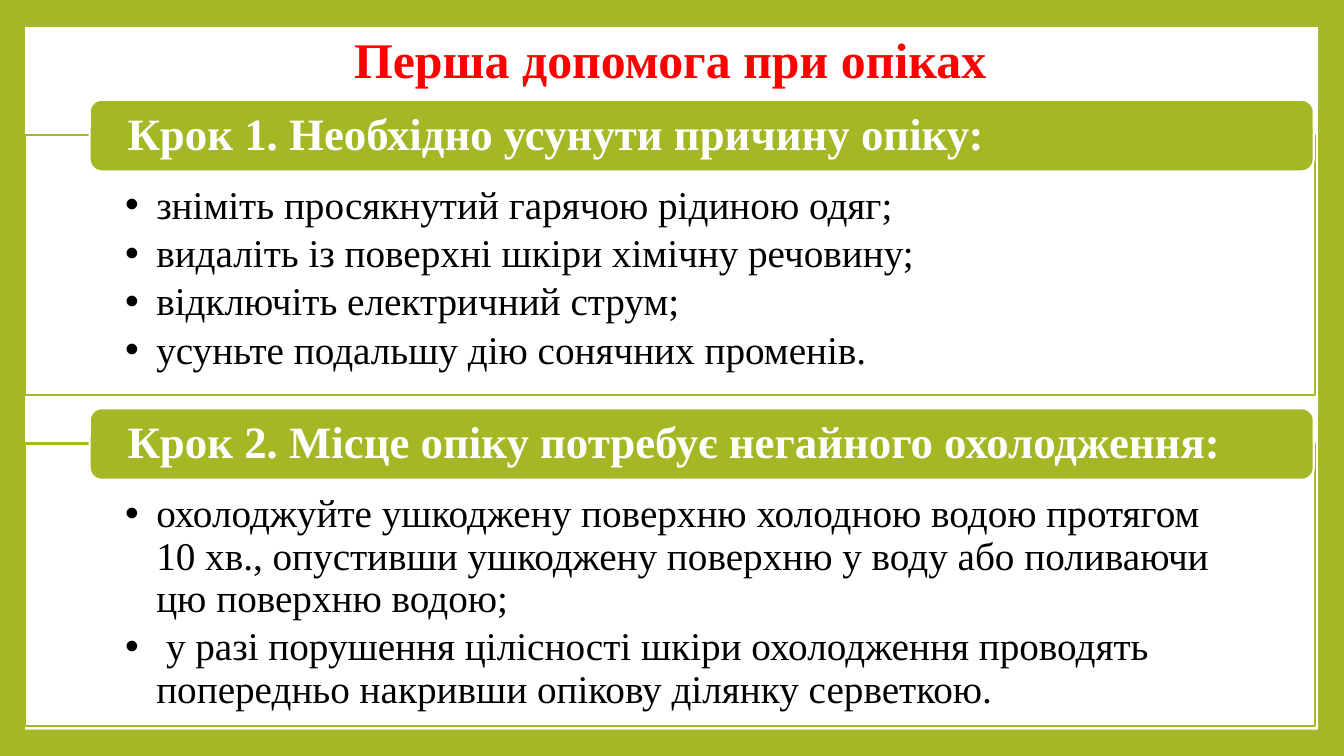
from pptx import Presentation
from pptx.dml.color import RGBColor
from pptx.enum.shapes import MSO_SHAPE as Shape
from pptx.enum.text import MSO_ANCHOR as Anchor, MSO_AUTO_SIZE as Auto, PP_ALIGN as Align
from pptx.util import Inches, Pt

FONT = "Times New Roman"
GREEN, WHITE, BLACK, RED = "A4B724", "FFFFFF", "000000", "FF0000"
BACK = "A6B727"
TITLE = "Перша допомога при опіках"
# heading, top of the heading bar, height of the list box, list items
STEPS = [
    ("Крок 1. Необхідно усунути причину опіку:", 0.99, 2.58, [
        "зніміть просякнутий гарячою рідиною одяг;",
        "видаліть із поверхні шкіри хімічну речовину;",
        "відключіть електричний струм;",
        "усуньте подальшу дію сонячних променів.",
    ]),
    ("Крок 2. Місце опіку потребує негайного охолодження:", 4.05, 2.8, [
        "охолоджуйте ушкоджену поверхню холодною водою протягом 10 хв., "
        "опустивши ушкоджену поверхню у воду або поливаючи цю поверхню водою;",
        " у разі порушення цілісності шкіри охолодження проводять "
        "попередньо накривши опікову ділянку серветкою.",
    ]),
]
LEFT, WIDE = 0.25, 12.79
BAR_LEFT, BAR_WIDE, BAR_HIGH = 0.89, 12.14, 0.71
DROP = 0.35  # from the top of a bar to the top of its list box


def color(code):
    return RGBColor.from_string(code)


def place(shape, *box):
    shape.left, shape.top, shape.width, shape.height = map(Inches, box)


def paint(shape, fill, line=None):
    shape.fill.solid()
    shape.fill.fore_color.rgb = color(fill)
    if line:
        shape.line.color.rgb = color(line)
        shape.line.width = Pt(1.5)
    else:
        shape.line.fill.background()


def write(shape, lines, size, tint, bold=False, align=Align.LEFT,
          anchor=Anchor.MIDDLE, inset=(0.1, 0.05, 0.1, 0.05), hang=0):
    """Fill a shape with one paragraph a line; hang is the bullet indent."""
    frame = shape.text_frame
    frame.word_wrap, frame.auto_size = True, Auto.NONE
    frame.vertical_anchor = anchor
    (frame.margin_left, frame.margin_top,
     frame.margin_right, frame.margin_bottom) = map(Inches, inset)
    for i, line in enumerate(lines):
        para = frame.add_paragraph() if i else frame.paragraphs[0]
        para.alignment, para.line_spacing = align, 0.9
        para.space_before = Pt(4.2 if i else 0)
        if hang:
            props = para._p.get_or_add_pPr()
            props.set("marL", str(Inches(hang)))
            props.set("indent", str(-Inches(hang)))
        run = para.add_run()
        run.text = line
        font = run.font
        font.name, font.size, font.bold = FONT, Pt(size), bold
        font.color.rgb = color(tint)


def add(slide, kind, box, fill, line=None):
    shape = slide.shapes.add_shape(kind, *map(Inches, box))
    shape.shadow.inherit = False
    paint(shape, fill, line)
    return shape


def main():
    deck = Presentation()
    deck.slide_width, deck.slide_height = Inches(13.33), Inches(7.5)
    slide = deck.slides.add_slide(deck.slide_layouts[3])
    slide.background.fill.solid()
    slide.background.fill.fore_color.rgb = color(BACK)

    panel = add(slide, Shape.RECTANGLE, (0.25, 0.27, 12.82, 6.97), WHITE)
    slide.shapes._spTree.insert(2, panel._element)  # behind the placeholders

    title = slide.shapes.title
    place(title, 1.25, 0.29, 10.8, 0.66)
    write(title, [TITLE], 35.6, RED, bold=True, align=Align.CENTER)

    for i, (head, top, high, items) in enumerate(STEPS, 1):
        body = slide.placeholders[i]
        place(body, LEFT, top + DROP, WIDE, high)
        paint(body, WHITE, GREEN)
        write(body, items, 28, BLACK, anchor=Anchor.TOP,
              inset=(0.99, 0.5, 0.99, 0.22), hang=0.31)
        bar = add(slide, Shape.ROUNDED_RECTANGLE,
                  (BAR_LEFT, top, BAR_WIDE, BAR_HIGH), GREEN, WHITE)
        write(bar, [head], 32, WHITE, bold=True, inset=(0.34, 0, 0.34, 0))

    deck.save("out.pptx")


if __name__ == "__main__":
    main()
